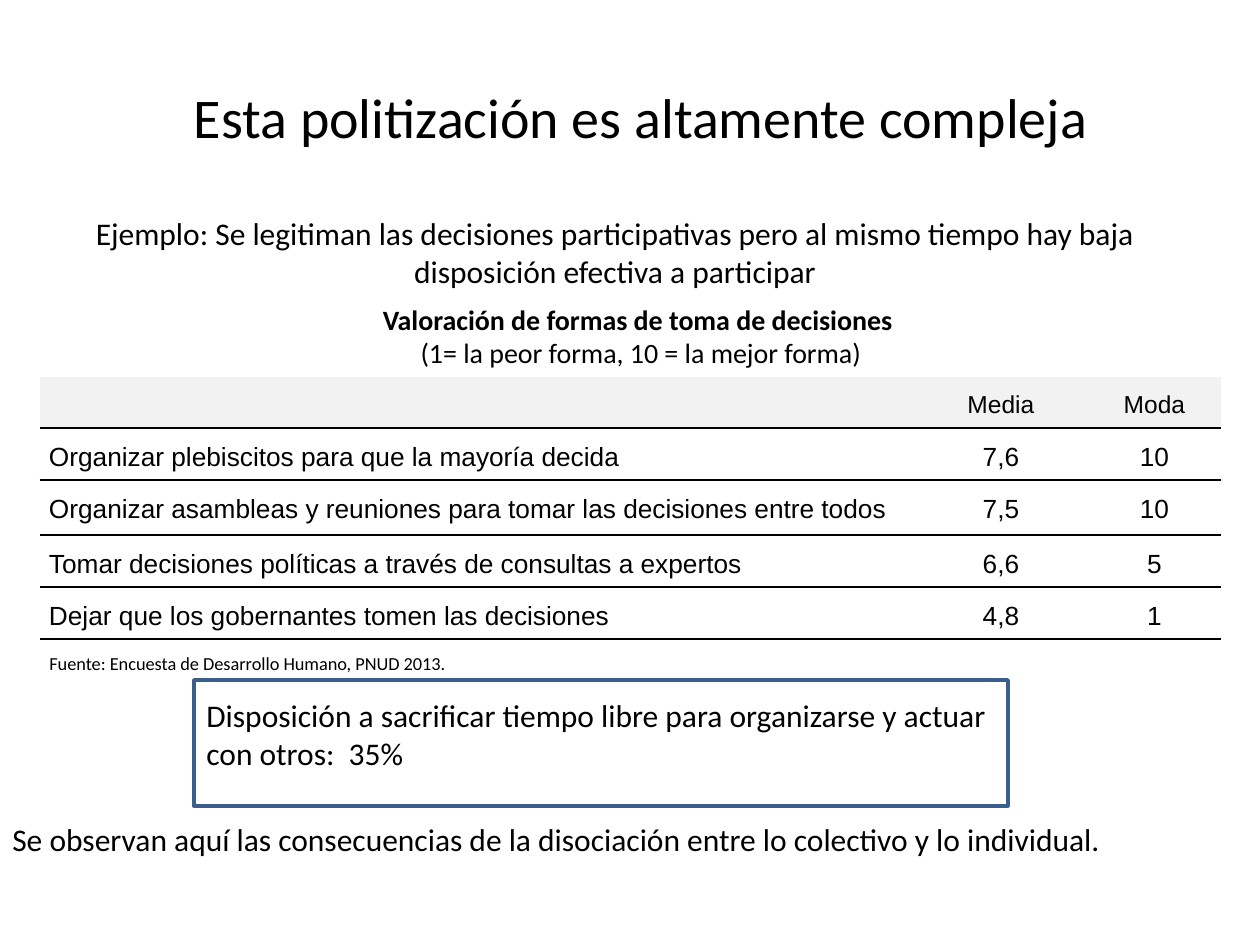
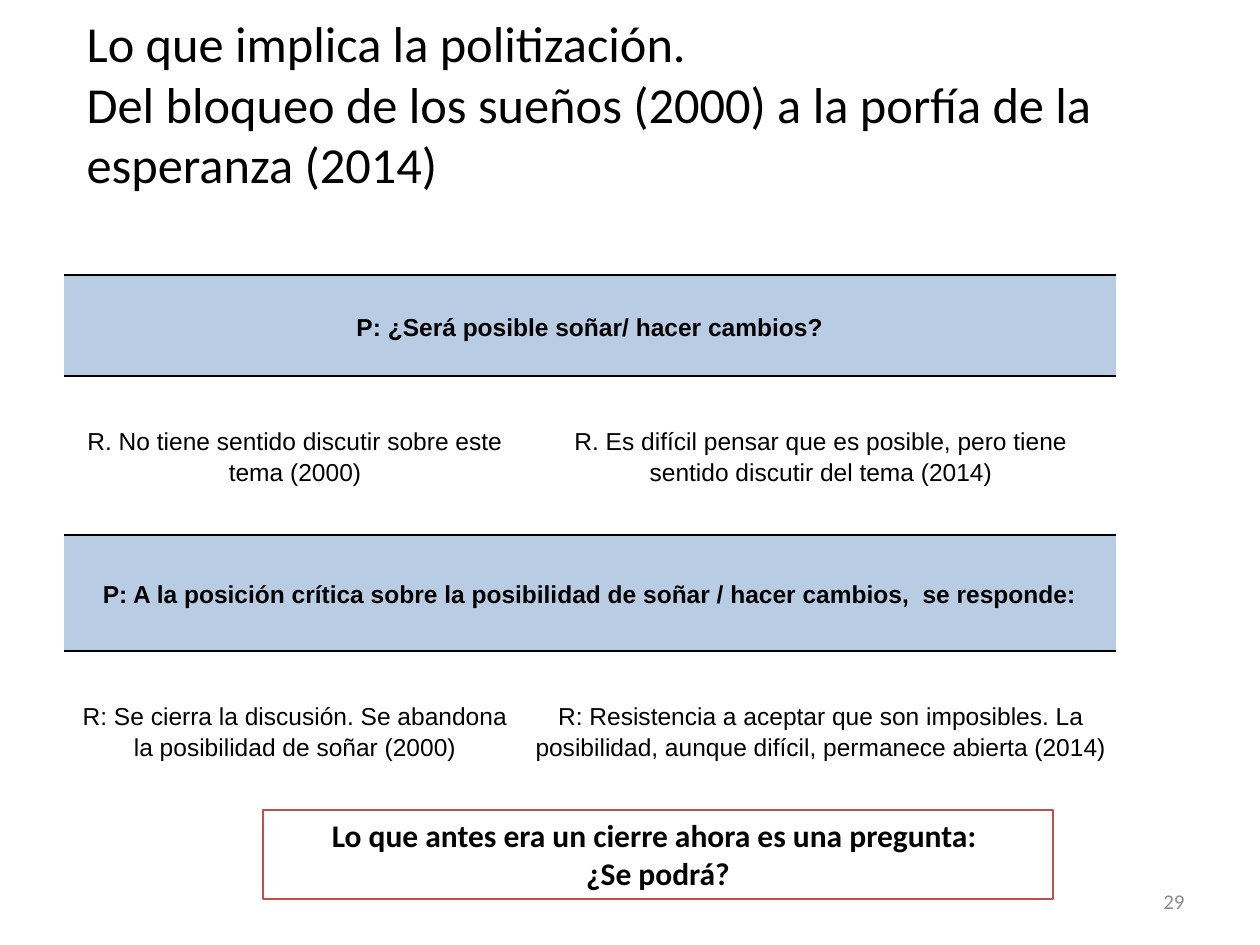
import copy

import lxml.etree
import pptx
import pptx.dml.color
import pptx.enum.shapes
import pptx.enum.text
import pptx.oxml
import pptx.oxml.ns
import pptx.util

COLORS = {
    "text": "000000",
    "paper": "FFFFFF",
    "header": "F2F2F2",
    "question": "B8CCE4",
    "blue_frame": "3A5F8C",
    "red_frame": "C0504D",
    "number": "8C8C8C",
}
PX_PER_INCH = 126
TITLE_ONLY = 5
PLAIN_TABLE_STYLE = "{2D5ABB26-0587-4C30-8999-92F81FD0307C}"
ALIGN = pptx.enum.text.PP_ALIGN
ANCHOR = pptx.enum.text.MSO_ANCHOR
qn = pptx.oxml.ns.qn


def px(length):
    return pptx.util.Emu(round(length * 914400 / PX_PER_INCH))


def color(name):
    return pptx.dml.color.RGBColor.from_string(COLORS[name])


def write(frame, text, size=18, font="Calibri", ink="text", bold=False,
          align=ALIGN.LEFT, spacing=None, indent=0):
    """Fill a text frame: newline starts a paragraph, \\v breaks a line."""
    bolds = bold if isinstance(bold, list) else [bold] * (text.count("\n") + 1)
    frame.text = text
    for paragraph, heavy in zip(frame.paragraphs, bolds):
        paragraph.alignment = align
        if spacing:
            paragraph.line_spacing = spacing
        if indent:
            paragraph._p.get_or_add_pPr().set("indent", str(px(indent)))
        for run in paragraph.runs:
            run.font.size = pptx.util.Pt(size)
            run.font.name = font
            run.font.bold = heavy
            run.font.color.rgb = color(ink)
        # A line break takes the height of the text around it
        for line_break in paragraph._p.findall(qn("a:br")):
            line_break.insert(0, copy.deepcopy(paragraph.runs[0]._r.rPr))


def add_text(slide, box, text, wrap=True, anchor=ANCHOR.TOP, **text_format):
    text_box = slide.shapes.add_textbox(*map(px, box))
    text_box.text_frame.word_wrap = wrap
    text_box.text_frame.vertical_anchor = anchor
    write(text_box.text_frame, text, **text_format)


def add_frame(slide, box, line, width):
    shape = slide.shapes.add_shape(
        pptx.enum.shapes.MSO_SHAPE.RECTANGLE, *map(px, box))
    shape.shadow.inherit = False
    shape.fill.background()
    shape.line.color.rgb = color(line)
    shape.line.width = pptx.util.Pt(width)
    return shape


def add_title_slide(presentation, box, title, size, align):
    slide = presentation.slides.add_slide(
        presentation.slide_layouts[TITLE_ONLY])
    slide.background.fill.solid()
    slide.background.fill.fore_color.rgb = color("paper")
    shape = slide.shapes.title
    shape.left, shape.top, shape.width, shape.height = map(px, box)
    frame = shape.text_frame
    frame.auto_size = pptx.enum.text.MSO_AUTO_SIZE.NONE
    frame.word_wrap = True
    frame.vertical_anchor = ANCHOR.MIDDLE
    write(frame, title, size=size, align=align)
    return slide


def rule_cell(cell, edge):
    """Draw a thin rule on one edge of a cell: lnT or lnB."""
    rule = lxml.etree.SubElement(
        cell._tc.get_or_add_tcPr(), qn("a:" + edge), w="12700")
    solid = lxml.etree.SubElement(rule, qn("a:solidFill"))
    lxml.etree.SubElement(solid, qn("a:srgbClr"), val=COLORS["text"])


def add_ruled_table(slide, corner, widths, heights):
    size = sum(widths), sum(heights)
    table = slide.shapes.add_table(
        len(heights), len(widths), *map(px, corner + size)).table
    table.first_row = table.horz_banding = False
    table._tbl.tblPr.find(qn("a:tableStyleId")).text = PLAIN_TABLE_STYLE
    for column, width in zip(table.columns, widths):
        column.width = px(width)
    for row, height in zip(table.rows, heights):
        row.height = px(height)
    for cell in table.iter_cells():
        cell.margin_left = cell.margin_right = px(9)
        cell.margin_top = cell.margin_bottom = 0
    return table


def fill_cell(cell, name):
    if name is None:
        cell.fill.background()
    else:
        cell.fill.solid()
        cell.fill.fore_color.rgb = color(name)


def add_rating_table(slide, corner):
    rows = [
        ("", "Media", "Moda"),
        ("Organizar plebiscitos para que la mayoría decida", "7,6", "10"),
        ("Organizar asambleas y reuniones para tomar las decisiones entre todos",
         "7,5", "10"),
        ("Tomar decisiones políticas a través de consultas a expertos",
         "6,6", "5"),
        ("Dejar que los gobernantes tomen las decisiones", "4,8", "1"),
    ]
    table = add_ruled_table(slide, corner, (874, 149, 158), (51, 52, 55, 52, 52))
    for row_index, row in enumerate(rows):
        for column_index, text in enumerate(row):
            cell = table.cell(row_index, column_index)
            rule_cell(cell, "lnB")
            fill_cell(cell, None if row_index else "header")
            write(cell.text_frame, text, font="Arial", spacing=1.5,
                  size=15 if row_index else 14,
                  align=ALIGN.CENTER if column_index else ALIGN.LEFT,
                  indent=25 if column_index else 0)


def add_question_table(slide, corner):
    # A row with one text is a question across both columns
    rows = [
        ["P: ¿Será posible soñar/ hacer cambios?"],
        ["R. No tiene sentido discutir sobre este tema (2000)",
         "R. Es difícil pensar que es posible, pero tiene sentido discutir "
         "del tema (2014)"],
        ["P: A la posición crítica sobre la posibilidad de soñar / hacer "
         "cambios,  se responde:"],
        ["R: Se cierra la discusión. Se abandona la posibilidad de soñar (2000)",
         "R: Resistencia a aceptar que son imposibles. La posibilidad, aunque "
         "difícil, permanece abierta (2014)"],
    ]
    table = add_ruled_table(slide, corner, (462, 590), (101, 159, 116, 159))
    for row_index, row in enumerate(rows):
        is_question = len(row) == 1
        if is_question:
            table.cell(row_index, 0).merge(table.cell(row_index, 1))
        for column_index in range(2):
            cell = table.cell(row_index, column_index)
            if row_index == 0:
                rule_cell(cell, "lnT")
            if row_index < len(rows) - 1:
                rule_cell(cell, "lnB")
            fill_cell(cell, "question" if is_question else None)
            cell.vertical_anchor = ANCHOR.MIDDLE
        for column_index, text in enumerate(row):
            write(table.cell(row_index, column_index).text_frame, text, size=14,
                  font="Arial", bold=is_question, align=ALIGN.CENTER,
                  spacing=1.15)


def add_availability_box(slide, box):
    left, top, width, height = box
    add_text(slide, (left, top + 10, width + 31, 89),
             "Disposición a sacrificar tiempo libre para organizarse y actuar "
             "con otros:  35%")
    add_frame(slide, box, "blue_frame", 2)


def add_conclusion_box(slide, box):
    frame = add_frame(slide, box, "red_frame", 1).text_frame
    frame.word_wrap = False
    frame.vertical_anchor = ANCHOR.TOP
    write(frame, "Lo que antes era un cierre ahora es una pregunta: \n¿Se podrá?",
          bold=True, align=ALIGN.CENTER)


def build_complexity_slide(presentation):
    slide = add_title_slide(presentation, (74, 37, 1134, 158),
                            "Esta politización es altamente compleja",
                            32, ALIGN.CENTER)
    # Example and table heading
    add_text(slide, (40, 208, 1150, 89),
             "Ejemplo: Se legitiman las decisiones participativas pero al mismo "
             "tiempo hay baja disposición efectiva a participar",
             align=ALIGN.CENTER)
    add_text(slide, (244, 296, 794, 81),
             "Valoración de formas de toma de decisiones \n"
             "(1= la peor forma, 10 = la mejor forma)",
             size=16, bold=[True, False], align=ALIGN.CENTER)
    # Ratings and their source
    add_rating_table(slide, (40, 377))
    add_text(slide, (37, 646, 478, 35),
             "Fuente: Encuesta de Desarrollo Humano, PNUD 2013.",
             wrap=False, size=10.5)
    # Conclusions
    add_availability_box(slide, (194, 680, 814, 126))
    add_text(slide, (-15, 814, 1150, 50),
             "Se observan aquí las consecuencias de la disociación entre lo "
             "colectivo y lo individual. ", align=ALIGN.CENTER)


def build_hope_slide(presentation):
    slide = add_title_slide(presentation, (74, 6, 1124, 194),
                            "Lo que implica la politización.\v"
                            "Del bloqueo de los sueños (2000) a la porfía de la "
                            "esperanza (2014)", 28.8, ALIGN.LEFT)
    add_question_table(slide, (64, 275))
    add_conclusion_box(slide, (263, 810, 790, 89))
    # Slide number
    add_text(slide, (903, 876, 294, 50), "29", size=12, ink="number",
             align=ALIGN.RIGHT, anchor=ANCHOR.MIDDLE)


def main():
    presentation = pptx.Presentation()
    presentation.slide_width = px(1260)
    presentation.slide_height = px(945)
    build_complexity_slide(presentation)
    build_hope_slide(presentation)
    presentation.save("out.pptx")


if __name__ == "__main__":
    main()
